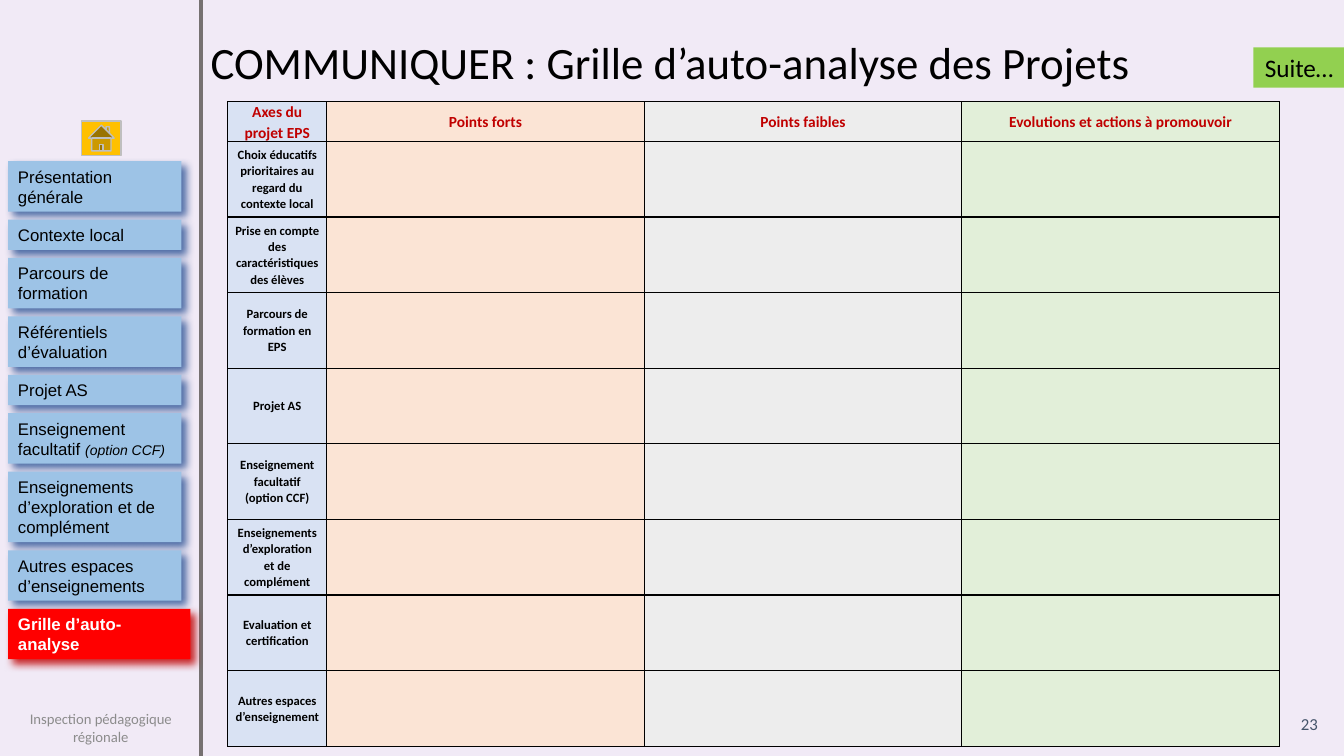
from lxml import etree
from pptx import Presentation
from pptx.dml.color import RGBColor
from pptx.enum.shapes import MSO_CONNECTOR, MSO_SHAPE
from pptx.enum.text import MSO_ANCHOR, MSO_AUTO_SIZE, PP_ALIGN
from pptx.oxml import parse_xml
from pptx.oxml.ns import qn
from pptx.util import Inches, Pt

RECT, HOME = MSO_SHAPE.RECTANGLE, MSO_SHAPE.ACTION_BUTTON_HOME
LINE = MSO_CONNECTOR.STRAIGHT
TOP, MID = MSO_ANCHOR.TOP, MSO_ANCHOR.MIDDLE
LEFT, MIDDLE, RIGHT = PP_ALIGN.LEFT, PP_ALIGN.CENTER, PP_ALIGN.RIGHT
GROW = MSO_AUTO_SIZE.SHAPE_TO_FIT_TEXT
NS = 'xmlns:a="http://schemas.openxmlformats.org/drawingml/2006/main"'

COLORS = {
    "page": "F1EAF6", "black": "000000", "white": "FFFFFF",
    "rule": "767171", "next": "92D050", "home": "FFC000", "edge": "BFBFBF",
    "menu": "9DC3E6", "shade": "2F5597", "active": "FF0000", "glow": "C00000",
    "head": "C00000", "foot": "8C8C8C", "number": "44546A",
    "axis": "D9E2F3", "strong": "FBE4D5", "weak": "EDEDED", "action": "E2EFD9",
}

# Menu entries: main text, small italic text, number of lines
MENU = [
    ("Présentation générale", "", 2),
    ("Contexte local", "", 1),
    ("Parcours de formation", "", 2),
    ("Référentiels d’évaluation", "", 2),
    ("Projet AS", "", 1),
    ("Enseignement facultatif ", "(option CCF)", 2),
    ("Enseignements d’exploration et de complément", "", 3),
    ("Autres espaces d’enseignements", "", 2),
    ("Grille d’auto-analyse", "", 2),
]
HEADS = ["Axes du projet EPS", "Points forts", "Points faibles",
         "Evolutions et actions à promouvoir"]
AXES = [
    "Choix éducatifs prioritaires au regard du contexte local",
    "Prise en compte des caractéristiques des élèves",
    "Parcours de formation en EPS",
    "Projet AS",
    "Enseignement facultatif (option CCF)",
    "Enseignements d’exploration\vet de complément",
    "Evaluation et certification",
    "Autres espaces d’enseignement",
]


def rgb(name):
    return RGBColor.from_string(COLORS[name])


class Deck:
    def __init__(self):
        self.prs = Presentation()
        self.prs.slide_width, self.prs.slide_height = Inches(13.33), Inches(7.5)
        self.slide = self.prs.slides.add_slide(self.prs.slide_layouts[6])
        self.shapes = self.slide.shapes
        fill = self.slide.background.fill
        fill.solid()
        fill.fore_color.rgb = rgb("page")

    def label(self, frame, text, size, color="black", font="Calibri",
              align=LEFT, bold=False):
        par = frame.paragraphs[0]
        par.text = text
        par.alignment = align
        par.font.size, par.font.name = Pt(size), font
        par.font.bold, par.font.color.rgb = bold, rgb(color)
        return par

    def text(self, box, text, size, color="black", align=LEFT, anchor=TOP):
        frame = self.shapes.add_textbox(*map(Inches, box)).text_frame
        frame.word_wrap, frame.vertical_anchor = True, anchor
        self.label(frame, text, size, color, align=align)

    def block(self, box, fill, kind=RECT, edge=None):
        shape = self.shapes.add_shape(kind, *map(Inches, box))
        shape.shadow.inherit = False
        shape.fill.solid()
        shape.fill.fore_color.rgb = rgb(fill)
        if edge:
            shape.line.color.rgb, shape.line.width = rgb(edge), Pt(1)
        else:
            shape.line.fill.background()
        return shape

    def rule(self, x, color, width):
        line = self.shapes.add_connector(
            LINE, Inches(x), 0, Inches(x), self.prs.slide_height)
        line.line.color.rgb, line.line.width = rgb(color), Pt(width)
        etree.SubElement(line._element.spPr, qn("a:effectLst"))

    def button(self, box, text, note="", active=False):
        shape = self.block(box, "active" if active else "menu")
        shade = COLORS["glow" if active else "shade"]
        shape._element.spPr.find(qn("a:effectLst")).append(parse_xml(
            f'<a:outerShdw {NS} blurRad="{Pt(6)}" dist="{Pt(5)}" dir="2700000"'
            f' algn="tl" rotWithShape="0"><a:srgbClr val="{shade}">'
            '<a:alpha val="84000"/></a:srgbClr></a:outerShdw>'))
        frame = shape.text_frame
        frame.word_wrap, frame.vertical_anchor = True, MID
        frame.auto_size = GROW
        par = self.label(frame, text, 12, "white" if active else "black",
                         "Arial", bold=active)
        if note:
            run = par.add_run()
            run.text = note
            run.font.size, run.font.italic = Pt(10), True

    def cell(self, cell, fill):
        props = cell._tc.get_or_add_tcPr()
        for side in "LRTB":
            props.append(parse_xml(
                f'<a:ln{side} {NS} w="{Pt(1)}"><a:solidFill><a:srgbClr '
                f'val="{COLORS["black"]}"/></a:solidFill></a:ln{side}>'))
        cell.fill.solid()
        cell.fill.fore_color.rgb = rgb(fill)
        cell.vertical_anchor = MID
        cell.margin_left = cell.margin_right = Inches(0.06)
        cell.margin_top = cell.margin_bottom = 0

    def grid(self, box, cols, rows, fills, heads, axes):
        table = self.shapes.add_table(
            len(rows), len(cols), *map(Inches, box)).table
        table.first_row = table.horz_banding = False
        for col, width in zip(table.columns, cols):
            col.width = Inches(width)
        for r, height in enumerate(rows):
            table.rows[r].height = Inches(height)
            for c, fill in enumerate(fills):
                cell = table.cell(r, c)
                self.cell(cell, fill)
                if r and c:
                    continue
                text, size, color = ((axes[r - 1], 9, "black") if r
                                     else (heads[c], 11, "head"))
                par = self.label(cell.text_frame, text, size, color,
                                 align=MIDDLE, bold=True)
                par.line_spacing = 1.07


def main():
    deck = Deck()

    # Title, side rule and next button
    deck.text((1.99, 0.3, 10.92, 0.64),
              "COMMUNIQUER : Grille d’auto-analyse des Projets", 32)
    deck.rule(1.99, "rule", 3)
    frame = deck.block((12.43, 0.47, 0.91, 0.4), "next").text_frame
    frame.word_wrap, frame.auto_size = False, GROW
    frame.vertical_anchor = TOP
    deck.label(frame, "Suite…", 18, align=MIDDLE)

    # Side menu, stacked with equal gaps
    deck.block((0.81, 1.2, 0.39, 0.34), "home", HOME, "edge")
    top = 1.6
    for text, note, lines in MENU:
        active = text == MENU[-1][0]
        high = 0.1 + 0.2 * lines
        deck.button((0.08, top, 1.81 if active else 1.72, high),
                    text, note, active)
        top += high + 0.08

    # Analysis grid
    deck.grid((2.26, 1.01, 10.43, 6.38), [0.98] + [3.15] * 3,
              [0.38] + [0.75] * len(AXES),
              ["axis", "strong", "weak", "action"], HEADS, AXES)

    # Footer and page number
    deck.text((0.14, 7.05, 1.72, 0.34), "Inspection pédagogique régionale",
              10.5, "foot", MIDDLE, MID)
    deck.text((12.69, 6.98, 0.48, 0.4), "23", 12, "number", RIGHT, MID)

    deck.prs.save("out.pptx")


if __name__ == "__main__":
    main()
